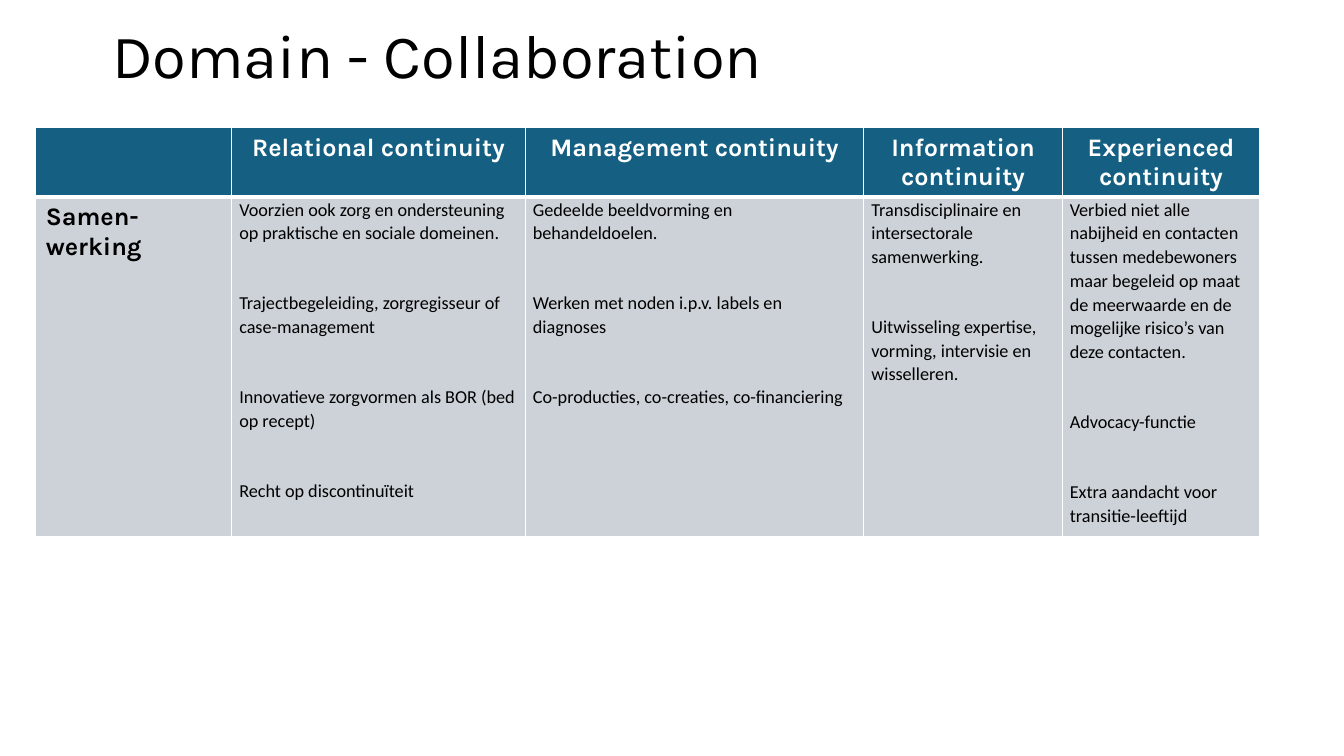
from dataclasses import dataclass

from lxml.etree import SubElement
from pptx import Presentation
from pptx.dml.color import RGBColor
from pptx.enum.text import MSO_ANCHOR, MSO_AUTO_SIZE, PP_ALIGN
from pptx.oxml.ns import qn
from pptx.util import Cm, Pt


@dataclass(frozen=True)
class Theme:
    heading_font: str = "Karla"
    body_font: str = "Calibri"
    black: str = "000000"
    white: str = "FFFFFF"
    header_fill: str = "156082"
    body_fill: str = "CCD2D8"
    title_size: int = 44
    header_size: int = 18
    body_size: int = 13
    thin_rule: int = 1
    thick_rule: int = 3


THEME = Theme()
COLUMN_WIDTHS = [4.94, 7.4, 8.53, 5, 4.98]
ROW_HEIGHTS = [1.75, 8.56]
HEADERS = ["", "Relational continuity", "Management continuity",
           "Information continuity", "Experienced continuity"]
ROW_LABEL = "Samen-werking"
ACTIONS = [
    ["Voorzien ook zorg en ondersteuning op praktische en sociale domeinen.",
     "Trajectbegeleiding, zorgregisseur of case-management",
     "Innovatieve zorgvormen als BOR (bed op recept)",
     "Recht op discontinuïteit"],
    ["Gedeelde beeldvorming en behandeldoelen.",
     "Werken met noden i.p.v. labels en diagnoses",
     "Co-producties, co-creaties, co-financiering"],
    ["Transdisciplinaire en intersectorale samenwerking.",
     "Uitwisseling expertise, vorming, intervisie en wisselleren."],
    ["Verbied niet alle nabijheid en contacten tussen medebewoners maar "
     "begeleid op maat de meerwaarde en de mogelijke risico’s van deze contacten.",
     "Advocacy-functie",
     "Extra aandacht voor transitie-leeftijd"],
]


def style_font(font, name, size, color, bold=False):
    font.name = name
    font.size = Pt(size)
    font.bold = bold
    font.color.rgb = RGBColor.from_string(color)


def add_title(s, text):
    sp = s.shapes.title
    sp.left, sp.top, sp.width, sp.height = Cm(2.57), Cm(-0.76), Cm(27.94), Cm(4.47)
    tf = sp.text_frame
    tf.text = text
    tf.word_wrap = True
    tf.auto_size = MSO_AUTO_SIZE.NONE
    tf.vertical_anchor = MSO_ANCHOR.MIDDLE
    p = tf.paragraphs[0]
    p.alignment = PP_ALIGN.LEFT
    p.line_spacing = 0.9
    style_font(p.runs[0].font, THEME.heading_font, THEME.title_size, THEME.black)


def style_cell(cell, fill, top, bottom):
    """Fill a cell and draw its white borders; top and bottom are widths in points."""
    tc_pr = cell._tc.get_or_add_tcPr()
    widths = {"a:lnL": THEME.thin_rule, "a:lnR": THEME.thin_rule,
              "a:lnT": top, "a:lnB": bottom}
    for tag, width in widths.items():
        line = SubElement(tc_pr, qn(tag), w=str(Pt(width)))
        solid = SubElement(line, qn("a:solidFill"))
        SubElement(solid, qn("a:srgbClr"), val=THEME.white)
    cell.fill.solid()
    cell.fill.fore_color.rgb = RGBColor.from_string(fill)


def write_heading(cell, text, color, alignment):
    cell.text_frame.text = text
    p = cell.text_frame.paragraphs[0]
    p.alignment = alignment
    style_font(p.font, THEME.heading_font, THEME.header_size, color, bold=True)
    for r in p.runs:
        style_font(r.font, THEME.heading_font, THEME.header_size, color, bold=True)


def write_actions(cell, actions):
    cell.margin_left = cell.margin_right = Cm(0.19)
    cell.margin_top = cell.margin_bottom = Cm(0)
    tf = cell.text_frame
    tf.text = "\n".join(actions)
    for i, p in enumerate(tf.paragraphs):
        p.line_spacing = 1.07
        p.space_before = Pt(33 if i else 0)
        style_font(p.runs[0].font, THEME.body_font, THEME.body_size, THEME.black)


def add_continuity_table(s):
    frame = s.shapes.add_table(len(ROW_HEIGHTS), len(COLUMN_WIDTHS), Cm(0.9), Cm(3.22),
                               Cm(sum(COLUMN_WIDTHS)), Cm(sum(ROW_HEIGHTS)))
    table = frame.table
    table.first_row = table.horz_banding = False
    for column, width in zip(table.columns, COLUMN_WIDTHS):
        column.width = Cm(width)
    for row, height in zip(table.rows, ROW_HEIGHTS):
        row.height = Cm(height)
    for i, header in enumerate(HEADERS):
        style_cell(table.cell(0, i), THEME.header_fill, THEME.thin_rule, THEME.thick_rule)
        style_cell(table.cell(1, i), THEME.body_fill, THEME.thick_rule, THEME.thin_rule)
        write_heading(table.cell(0, i), header, THEME.white, PP_ALIGN.CENTER)
    write_heading(table.cell(1, 0), ROW_LABEL, THEME.black, PP_ALIGN.LEFT)
    for i, actions in enumerate(ACTIONS, start=1):
        write_actions(table.cell(1, i), actions)


def main():
    prs = Presentation()
    prs.slide_width, prs.slide_height = Cm(33.87), Cm(19.05)
    s = prs.slides.add_slide(prs.slide_layouts[5])
    add_title(s, "Domain - Collaboration")
    add_continuity_table(s)
    prs.save("out.pptx")


if __name__ == "__main__":
    main()
